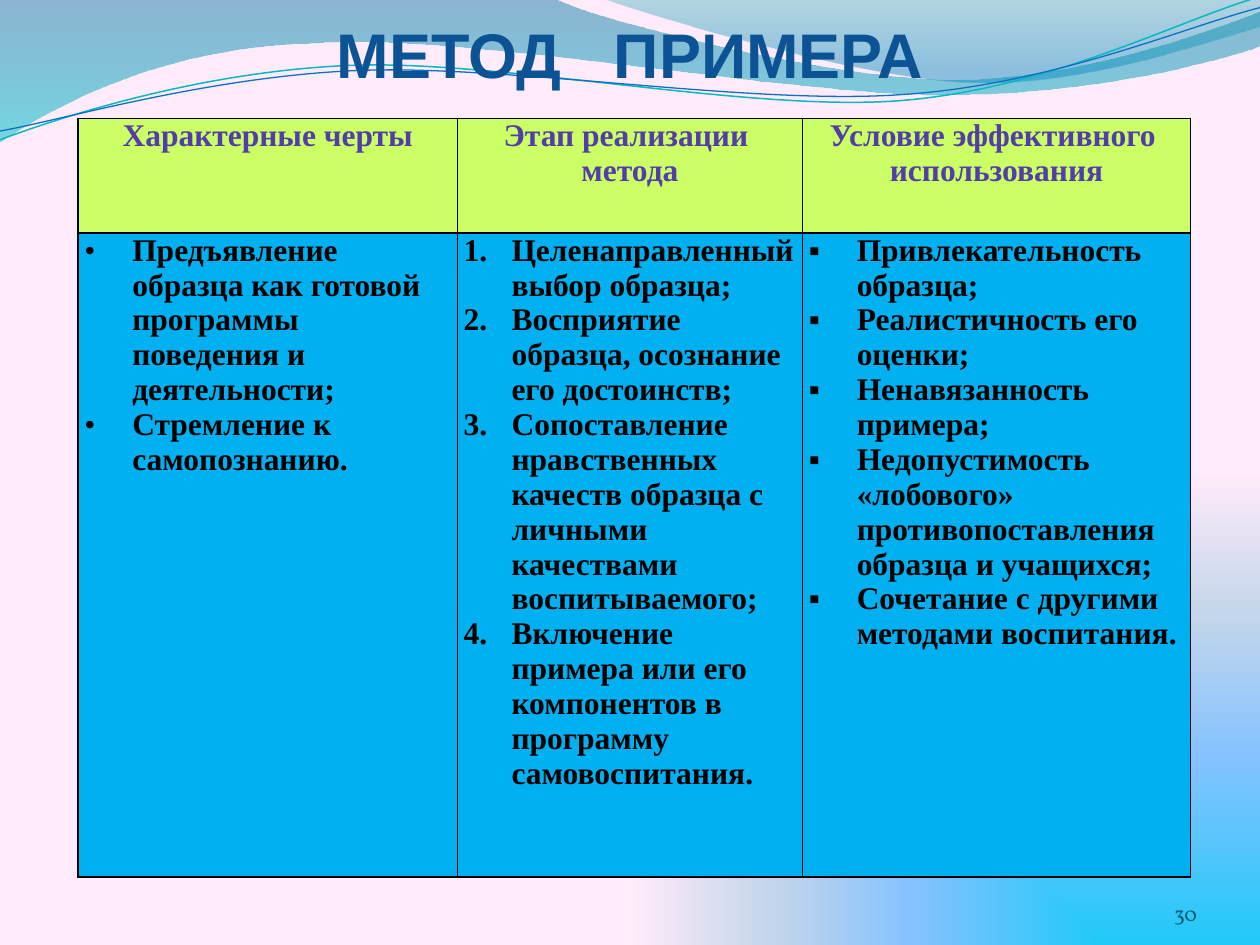
import math
from dataclasses import dataclass
from lxml import etree
from pptx import Presentation
from pptx import util as u
from pptx.dml.color import RGBColor
from pptx.enum import text as t
from pptx.oxml.ns import qn

In = u.Inches


@dataclass(frozen=True)
class Theme:
    title: str = "0B5394"
    head: str = "533EA9"
    body: str = "000000"
    page: str = "045D75"
    lime: str = "CCFF66"
    blue: str = "00B0F0"
    teal: str = "0AB8BF"
    navy: str = "0F6FC6"
    sans: str = "Arial"
    serif: str = "Times New Roman"
    old: str = "Vollkorn"
    big: int = 36
    mid: int = 18
    small: int = 12
    back: tuple = ((0, "20C9F8", 100), (40, "85C2FF", 100),
                   (70, "C4D6EB", 100), (100, "FFEBFA", 100))
    left: tuple = ((0, "0074A1", 45), (100, "00C6CF", 55))
    right: tuple = ((0, "00A1A9", 30), (80, "008BBF", 45))


def add(node, tag, **attrs):
    return etree.SubElement(node, qn(tag), {k: str(v) for k, v in attrs.items()})


def blend(stops, rect=False):
    grad = etree.Element(qn("a:gradFill"), rotWithShape="1")
    group = add(grad, "a:gsLst")
    for pos, color, alpha in stops:
        tint = add(add(group, "a:gs", pos=pos * 1000), "a:srgbClr", val=color)
        if alpha < 100:
            add(tint, "a:alpha", val=alpha * 1000)
    if rect:
        add(add(grad, "a:path", path="rect"), "a:fillToRect", l=100000, t=100000)
    else:
        add(grad, "a:lin", ang=5400000, scaled=0)
    return grad


def swap(fill, node, grad):
    fill.solid()
    node.replace(node.find(qn("a:solidFill")), grad)


def write(frame, lines, font, size, color, bold=False, align=t.PP_ALIGN.LEFT,
          mark=None, gap=0):
    for i, line in enumerate(lines):
        para = frame.paragraphs[0] if i == 0 else frame.add_paragraph()
        para.alignment = align
        for part in ([line] if isinstance(line, str) else line):
            run = para.add_run()
            run.text = part
            run.font.name, run.font.size = font, u.Pt(size)
            run.font.bold = bold
            run.font.color.rgb = RGBColor.from_string(color)
            if part == " " and gap:
                run._r.get_or_add_rPr().set("spc", str(gap * 100))
        if mark:
            props = para._p.get_or_add_pPr()
            props.set("marL", str(In(0.38)))
            props.set("indent", str(In(-0.38)))
            if mark == "1.":
                add(props, "a:buAutoNum", type="arabicPeriod")
            else:
                add(props, "a:buFont", typeface=font)
                add(props, "a:buChar", char=mark)


def turn(dot, mid, angle):
    cos, sin = math.cos(math.radians(angle)), math.sin(math.radians(angle))
    x, y = dot[0] - mid[0], dot[1] - mid[1]
    return mid[0] + x * cos - y * sin, mid[1] + x * sin + y * cos


class Deck:
    def __init__(self, theme):
        self.theme = theme
        self.file = Presentation()
        self.file.slide_width, self.file.slide_height = In(10), In(7.5)
        self.slide = self.file.slides.add_slide(self.file.slide_layouts[6])

    def ground(self, stops):
        fill = self.slide.background.fill
        fill.solid()
        node = self.slide._element.find(".//" + qn("p:bgPr"))
        swap(fill, node, blend(stops, rect=True))

    def shape(self, box, steps, close=False, tilt=0):
        x, y, w, h = box
        pen = self.slide.shapes.build_freeform(In(x), In(y), scale=1.0)
        pen.add_line_segments([(In(x + w), In(y)), (In(x + w), In(y + h))], close=close)
        item = pen.convert_to_shape()
        item.shadow.inherit = False
        item.rotation = tilt
        track = item._element.find(".//" + qn("a:path"))
        for node in list(track):
            track.remove(node)
        for i, step in enumerate(steps):
            kind = "moveTo" if i == 0 else "lnTo" if len(step) == 2 else "cubicBezTo"
            node = add(track, "a:" + kind)
            for dot in zip(step[::2], step[1::2]):
                px, py = turn(dot, (x + w / 2, y + h / 2), -tilt)
                add(node, "a:pt", x=int(In(px - x)), y=int(In(py - y)))
        if close:
            add(track, "a:close")
        return item

    def wave(self, box, steps, stops):
        item = self.shape(box, steps, close=True)
        swap(item.fill, item._element.spPr, blend(stops))
        item.line.fill.background()

    def curve(self, box, steps, color, width):
        item = self.shape(box, steps, tilt=-2.7)
        item.fill.background()
        item.line.color.rgb = RGBColor.from_string(color)
        item.line.width = u.Pt(width)

    def label(self, box, lines, wrap=True, anchor=t.MSO_ANCHOR.TOP, pad=0, **style):
        frame = self.slide.shapes.add_textbox(*map(In, box)).text_frame
        frame.word_wrap = wrap
        frame.vertical_anchor = anchor
        frame.margin_left = frame.margin_right = In(pad)
        frame.margin_top = frame.margin_bottom = In(pad)
        write(frame, lines, **style)

    def table(self, box, cols, rows, heads, lists):
        th = self.theme
        grid = self.slide.shapes.add_table(2, len(cols), *map(In, box)).table
        grid.first_row = grid.horz_banding = False
        for col, width in zip(grid.columns, cols):
            col.width = In(width)
        for row, height in zip(grid.rows, rows):
            row.height = In(height)
        for i, (head, (mark, items)) in enumerate(zip(heads, lists)):
            self.cell(grid.cell(0, i), th.lime, head, color=th.head,
                      align=t.PP_ALIGN.CENTER)
            self.cell(grid.cell(1, i), th.blue, items, color=th.body, mark=mark)

    def cell(self, cell, fill, lines, **style):
        th = self.theme
        cell.margin_left = cell.margin_right = In(0.05)
        cell.margin_top = cell.margin_bottom = 0
        props = cell._tc.get_or_add_tcPr()
        for side in "LRTB":
            edge = add(props, "a:ln" + side, w=u.Pt(1))
            add(add(edge, "a:solidFill"), "a:srgbClr", val=th.body)
        cell.fill.solid()
        cell.fill.fore_color.rgb = RGBColor.from_string(fill)
        write(cell.text_frame, lines, font=th.serif, size=th.mid, bold=True, **style)


def main():
    th = Theme()
    deck = Deck(th)
    deck.ground(th.back)
    deck.wave((-0.01, -0.01, 10.02, 1.14),
              [(0, 0), (4.4, -0.01), (4.76, 0.17, 6.64, 0.63, 7.58, 0.63),
               (8.53, 0.63, 9.58, 0.26, 10, 0.09), (10.01, 0.36),
               (9.83, 0.44, 8.7, 0.76, 7.46, 0.75),
               (6.22, 0.75, 3.82, 0.28, 2.57, 0.34),
               (1.29, 0.36, 0.46, 0.83, -0.01, 1.13), (0, 0)], th.left)
    deck.wave((4.79, -0.01, 5.21, 0.7),
              [(4.79, -0.01), (5.09, 0.11, 6.82, 0.62, 7.69, 0.65),
               (8.56, 0.69, 9.61, 0.32, 10, 0.21), (10, 0), (4.79, -0.01)], th.right)
    deck.curve((-0.02, 0.22, 10.02, 0.71),
               [(0, 1.11), (0.48, 0.93, 1.58, 0.57, 2.77, 0.52),
                (3.95, 0.47, 5.93, 0.89, 7.13, 0.8),
                (8.33, 0.71, 9.38, 0.15, 9.98, -0.02)], th.teal, 0.85)
    deck.curve((-0.02, 0.3, 10.03, 0.58),
               [(0, 1.04), (0.47, 0.96, 1.64, 0.61, 2.83, 0.56),
                (4.03, 0.51, 5.97, 0.84, 7.17, 0.75),
                (8.36, 0.67, 9.41, 0.21, 10, 0.06)], th.navy, 0.75)
    deck.table(
        (0.62, 0.94, 8.83, 6.02), (3.01, 2.74, 3.08), (0.91, 5.11),
        [["Характерные черты"],
         ["Этап реализации ", "метода"],
         ["Условие эффективного ", "использования"]],
        [("•", ["Предъявление образца как готовой программы поведения и деятельности;",
                "Стремление к самопознанию."]),
         ("1.", ["Целенаправленный выбор образца;",
                 "Восприятие образца, осознание его достоинств;",
                 "Сопоставление нравственных качеств образца с личными "
                 "качествами воспитываемого;",
                 "Включение примера или его компонентов в программу самовоспитания."]),
         ("▪", ["Привлекательность образца;", "Реалистичность его оценки;",
                "Ненавязанность примера;",
                "Недопустимость «лобового» противопоставления образца и учащихся;",
                "Сочетание с другими методами воспитания."])])
    deck.label((2.55, 0.07, 4.9, 1.01), [("МЕТОД", " ", "ПРИМЕРА")], wrap=False,
               pad=0.05, font=th.sans, size=th.big, color=th.title, bold=True,
               align=t.PP_ALIGN.CENTER, gap=20)
    deck.label((8.67, 6.95, 0.83, 0.4), ["30"], anchor=t.MSO_ANCHOR.BOTTOM,
               font=th.old, size=th.small, color=th.page, align=t.PP_ALIGN.RIGHT)
    deck.file.save("out.pptx")


if __name__ == "__main__":
    main()
